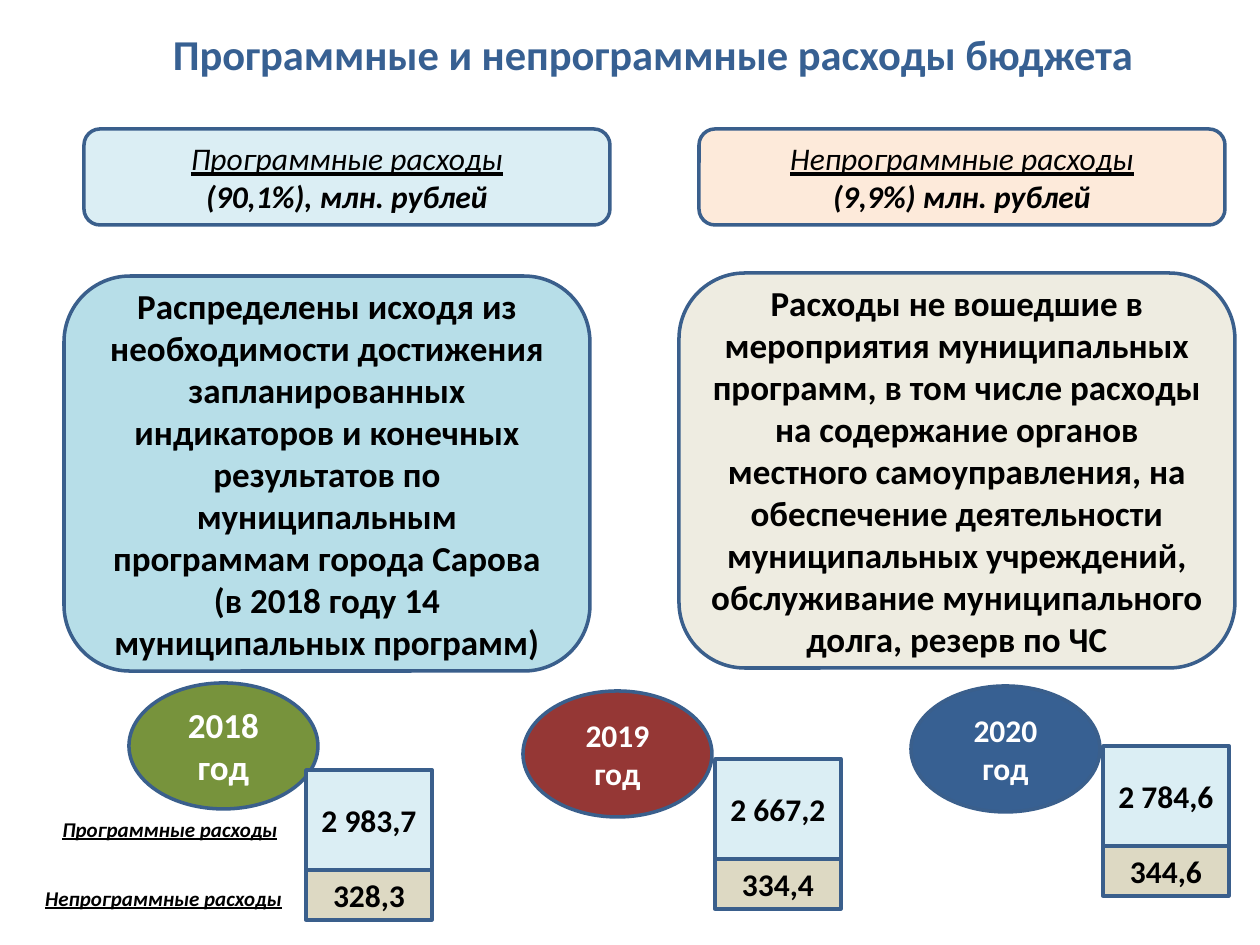
from dataclasses import dataclass

from pptx import Presentation
from pptx.dml.color import RGBColor
from pptx.enum.shapes import MSO_SHAPE
from pptx.enum.text import MSO_ANCHOR, PP_ALIGN
from pptx.util import Emu, Pt

ROUNDED, OVAL, RECT = MSO_SHAPE.ROUNDED_RECTANGLE, MSO_SHAPE.OVAL, MSO_SHAPE.RECTANGLE
MIDDLE, TOP, CENTER = MSO_ANCHOR.MIDDLE, MSO_ANCHOR.TOP, PP_ALIGN.CENTER
EMU_PER_PX = 914400 / 126


@dataclass(frozen=True)
class Theme:
    font: str = "Calibri"
    title: str = "376092"
    text: str = "000000"
    year_text: str = "FFFFFF"
    outline: str = "3A5F8C"
    program: str = "DBEEF4"
    program_note: str = "B7DEE8"
    other: str = "FDEADA"
    other_note: str = "EEECE1"
    other_value: str = "DDD9C3"
    years: tuple[str, ...] = ("77933C", "953735", "376092")
    title_size: float = 24.3
    note_size: int = 20
    body_size: int = 18
    label_size: int = 12
    line_width: int = 2


@dataclass(frozen=True)
class Box:
    left: int
    top: int
    width: int
    height: int


@dataclass(frozen=True)
class Line:
    text: str
    size: float
    color: str
    style: dict[str, bool]


@dataclass(frozen=True)
class Category:
    heading: str
    share: str
    heading_box: Box
    heading_fill: str
    note: str
    note_box: Box
    note_fill: str


@dataclass(frozen=True)
class Year:
    name: str
    size: int
    fill: str
    oval_left: int
    oval_top: int
    program: str
    other: str
    column_left: int
    column_top: int


THEME = Theme()
BOLD = {"bold": True}
HEADING = {"italic": True, "underline": True}
SHARE = {"bold": True, "italic": True}
LABEL = {"bold": True, "italic": True, "underline": True}

OVAL_WIDTH, OVAL_HEIGHT = 189, 126
COLUMN_WIDTH, PROGRAM_HEIGHT, OTHER_HEIGHT = 126, 100, 50

CATEGORIES = (
    Category("Программные расходы", "(90,1%), млн. рублей",
             Box(84, 129, 526, 96), THEME.program,
             "Распределены исходя из необходимости достижения запланированных "
             "индикаторов и конечных результатов по муниципальным программам "
             "города Сарова (в 2018 году 14 муниципальных программ)",
             Box(64, 276, 526, 395), THEME.program_note),
    Category("Непрограммные расходы", "(9,9%) млн. рублей",
             Box(699, 129, 526, 96), THEME.other,
             "Расходы не вошедшие в мероприятия муниципальных программ, в том "
             "числе расходы на содержание органов местного самоуправления, на "
             "обеспечение деятельности муниципальных учреждений, обслуживание "
             "муниципального долга, резерв по ЧС",
             Box(679, 273, 556, 395), THEME.other_note),
)
YEARS = (
    Year("2018 год", THEME.note_size, THEME.years[0], 129, 683, "2 983,7", "328,3", 306, 770),
    Year("2019 год", THEME.body_size, THEME.years[1], 523, 691, "2 667,2", "334,4", 715, 759),
    Year("2020 год", THEME.body_size, THEME.years[2], 911, 686, "2 784,6", "344,6", 1103, 746),
)
ROW_LABELS = (
    ("Программные расходы", Box(0, 810, 340, 38)),
    ("Непрограммные расходы", Box(15, 879, 297, 38)),
)


def px(length: int) -> Emu:
    return Emu(round(length * EMU_PER_PX))


def bounds(box: Box) -> list[Emu]:
    return [px(length) for length in (box.left, box.top, box.width, box.height)]


def write(frame, lines: list[Line], anchor=MIDDLE) -> None:
    frame.word_wrap = True
    frame.vertical_anchor = anchor
    for index, line in enumerate(lines):
        paragraph = frame.add_paragraph() if index else frame.paragraphs[0]
        paragraph.alignment = CENTER
        run = paragraph.add_run()
        run.text = line.text
        run.font.color.rgb = RGBColor.from_string(line.color)
        formats = {"name": THEME.font, "size": Pt(line.size), **line.style}
        for attribute, value in formats.items():
            setattr(run.font, attribute, value)


def add_panel(slide, kind, box: Box, fill: str, lines: list[Line]) -> None:
    panel = slide.shapes.add_shape(kind, *bounds(box))
    panel.shadow.inherit = False
    panel.fill.solid()
    panel.fill.fore_color.rgb = RGBColor.from_string(fill)
    panel.line.color.rgb = RGBColor.from_string(THEME.outline)
    panel.line.width = Pt(THEME.line_width)
    write(panel.text_frame, lines)


def add_title(slide) -> None:
    frame = slide.shapes.add_textbox(*bounds(Box(117, 24, 1072, 60))).text_frame
    write(frame, [Line("Программные и непрограммные расходы бюджета",
                       THEME.title_size, THEME.title, BOLD)])


def add_category(slide, category: Category) -> None:
    add_panel(slide, ROUNDED, category.heading_box, category.heading_fill,
              [Line(category.heading, THEME.body_size, THEME.text, HEADING),
               Line(category.share, THEME.body_size, THEME.text, SHARE)])
    add_panel(slide, ROUNDED, category.note_box, category.note_fill,
              [Line(category.note, THEME.note_size, THEME.text, BOLD)])


def add_year(slide, year: Year) -> None:
    add_panel(slide, OVAL, Box(year.oval_left, year.oval_top, OVAL_WIDTH, OVAL_HEIGHT),
              year.fill, [Line(year.name, year.size, THEME.year_text, BOLD)])
    top = year.column_top
    for value, height, fill in ((year.program, PROGRAM_HEIGHT, THEME.program),
                                (year.other, OTHER_HEIGHT, THEME.other_value)):
        add_panel(slide, RECT, Box(year.column_left, top, COLUMN_WIDTH, height), fill,
                  [Line(value, THEME.body_size, THEME.text, BOLD)])
        top += height


def main() -> None:
    deck = Presentation()
    deck.slide_width, deck.slide_height = px(1260), px(945)
    slide = deck.slides.add_slide(deck.slide_layouts[6])

    add_title(slide)

    # Expense categories and what they cover
    for category in CATEGORIES:
        add_category(slide, category)

    # Yearly amounts
    for year in YEARS:
        add_year(slide, year)

    # Row labels beside the first column
    for label, box in ROW_LABELS:
        frame = slide.shapes.add_textbox(*bounds(box)).text_frame
        write(frame, [Line(label, THEME.label_size, THEME.text, LABEL)], TOP)

    deck.save("out.pptx")


if __name__ == "__main__":
    main()
